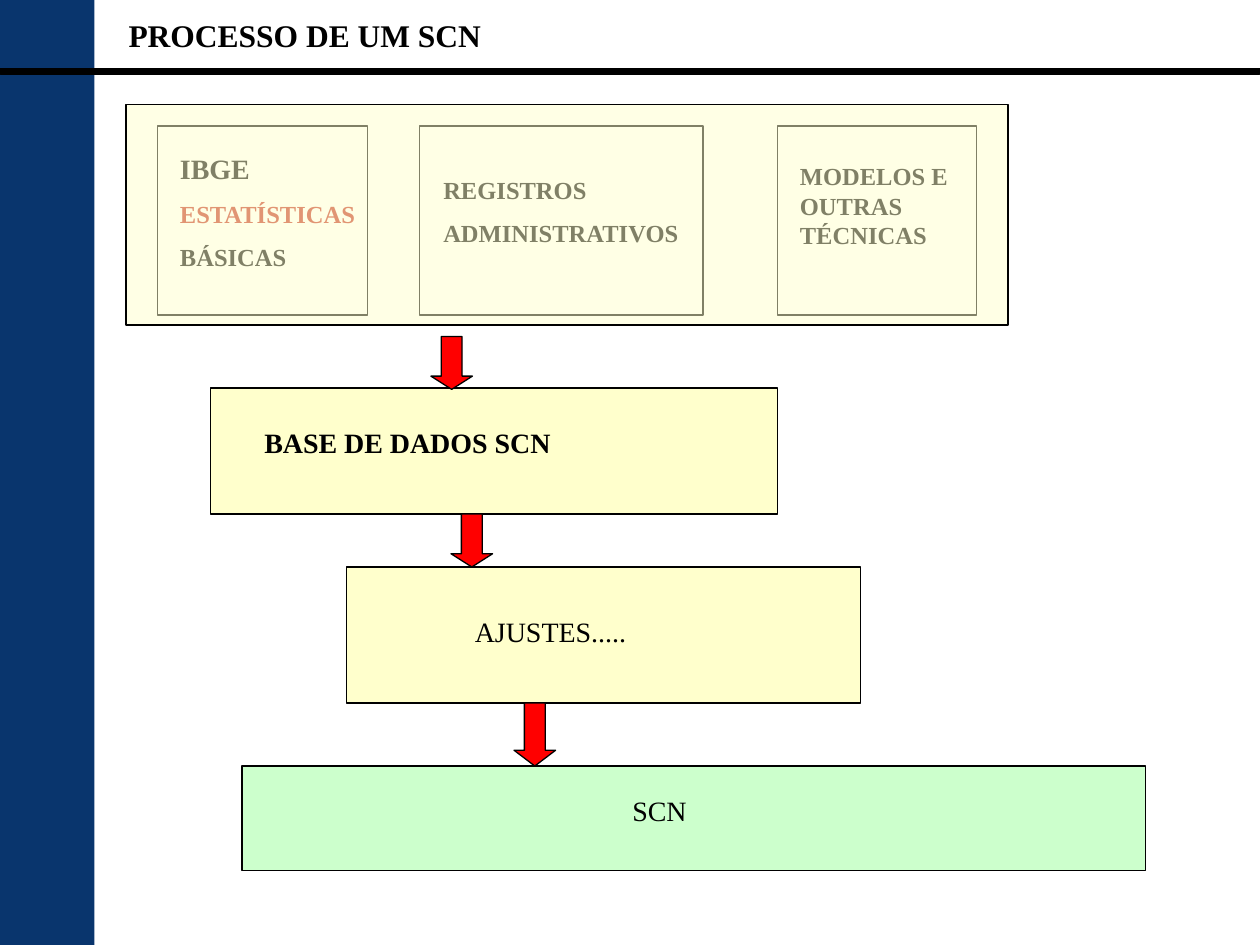
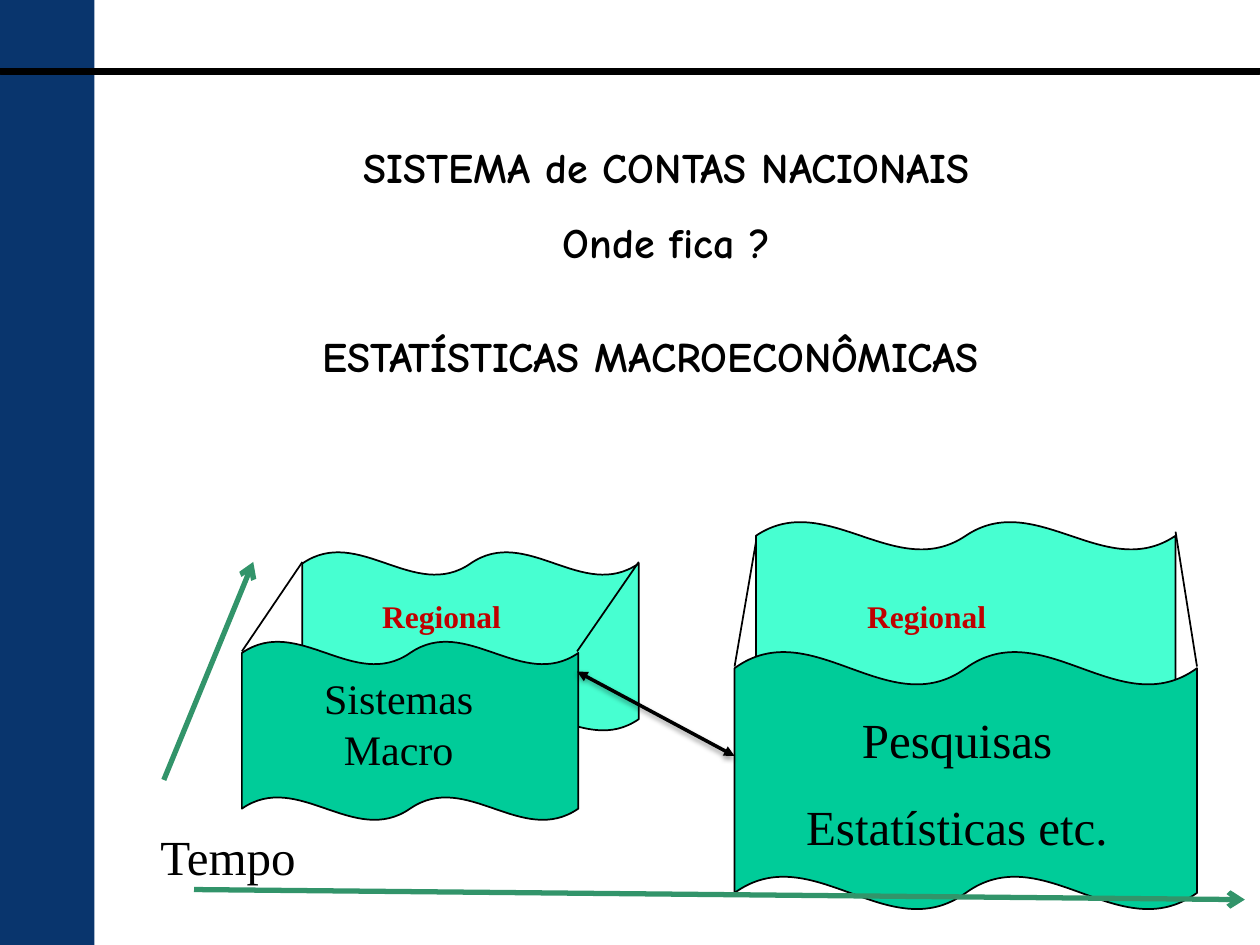
from lxml import etree
from pptx import Presentation
from pptx.dml.color import RGBColor
from pptx.enum.shapes import MSO_CONNECTOR, MSO_SHAPE
from pptx.enum.text import MSO_ANCHOR, MSO_AUTO_SIZE, PP_ALIGN
from pptx.oxml import parse_xml
from pptx.oxml.ns import nsdecls, qn
from pptx.util import Inches, Pt

COLOURS = {
    "black": "000000",
    "navy": "09356D",
    "cream": "FFFFCC",
    "pale green": "CCFFCC",
    "red": "FF0000",
    "brick": "C42B1A",
    "dark red": "C00000",
    "mint": "47FFD1",
    "teal": "00CC99",
    "axis green": "32946A",
}
SERIF, COMIC = "Times New Roman", "Comic Neue"
TITLE_ONLY = 5


def colour(name):
    return RGBColor.from_string(COLOURS[name])


class Deck:
    """Holds the presentation, its shared style and the current slide."""

    def __init__(self):
        self.presentation = Presentation()
        self.presentation.slide_width = Inches(10)
        self.presentation.slide_height = Inches(7.5)
        self.slide = None

    def new_slide(self):
        layout = self.presentation.slide_layouts[TITLE_ONLY]
        self.slide = self.presentation.slides.add_slide(layout)

    def add_master_bands(self):
        """Draw the side and top bands and move them to the slide master."""
        master_tree = self.presentation.slide_master.shapes.element
        side = self.shape(MSO_SHAPE.RECTANGLE, (0, 0, 0.75, 7.5), "navy", 0)
        rule = self.shape(MSO_SHAPE.RECTANGLE, (0, 0.54, 10, 0.05), "black", 0.5)
        for band in (side, rule):
            master_tree.append(band.element)

    def shape(self, kind, box, fill=None, line=0.75, adjustments=(), opacity=None):
        shape = self.slide.shapes.add_shape(kind, *map(Inches, box))
        shape.shadow.inherit = False
        for index, value in enumerate(adjustments):
            shape.adjustments[index] = value
        if fill:
            shape.fill.solid()
            shape.fill.fore_color.rgb = colour(fill)
        else:
            shape.fill.background()
        if line:
            shape.line.color.rgb = colour("black")
            shape.line.width = Pt(line)
        else:
            shape.line.fill.background()
        if opacity:
            fill_colour = shape.element.spPr.find(qn("a:solidFill"))[0]
            etree.SubElement(fill_colour, qn("a:alpha"), val=str(opacity * 1000))
        return shape

    def box(self, box, fill=None, opacity=None):
        self.shape(MSO_SHAPE.RECTANGLE, box, fill, opacity=opacity)

    def down_arrow(self, left, top, height):
        width = 0.33
        self.shape(MSO_SHAPE.DOWN_ARROW, (left, top, width, height), "red",
                   adjustments=(0.5, 0.25 * height / width))

    def wave(self, box, fill):
        self.shape(MSO_SHAPE.DOUBLE_WAVE, box, fill, 1, (0.065, 0))

    def set_lines(self, shape, lines, font, bold, align, anchor):
        """Fill a shape with lines given as (text, size[, colour])."""
        frame = shape.text_frame
        frame.word_wrap = True
        frame.auto_size = MSO_AUTO_SIZE.NONE
        frame.vertical_anchor = anchor
        for index, (text, size, *ink) in enumerate(lines):
            paragraph = frame.add_paragraph() if index else frame.paragraphs[0]
            paragraph.text = text
            paragraph.alignment = align
            paragraph.space_before = Pt(round(0.57 * size) if index else 0)
            paragraph.font.name = font
            paragraph.font.size = Pt(size)
            paragraph.font.bold = bold
            paragraph.font.color.rgb = colour(*ink or ["black"])

    def title(self, box, lines, font=SERIF, align=PP_ALIGN.LEFT, anchor=MSO_ANCHOR.TOP):
        title = self.slide.shapes.title
        title.left, title.top, title.width, title.height = map(Inches, box)
        self.set_lines(title, lines, font, True, align, anchor)

    def text(self, box, lines, font=SERIF, bold=False, align=PP_ALIGN.LEFT,
             anchor=MSO_ANCHOR.TOP):
        text_box = self.slide.shapes.add_textbox(*map(Inches, box))
        self.set_lines(text_box, lines, font, bold, align, anchor)

    def line(self, start, end, ink="black", width=1, head=None, tail=None, shadow=False):
        connector = self.slide.shapes.add_connector(
            MSO_CONNECTOR.STRAIGHT, *map(Inches, start + end))
        connector.line.color.rgb = colour(ink)
        connector.line.width = Pt(width)
        properties = connector.element.spPr
        outline = properties.find(qn("a:ln"))
        for tag, arrow in (("a:headEnd", head), ("a:tailEnd", tail)):
            if arrow:
                etree.SubElement(outline, qn(tag), type=arrow)
        effects = etree.SubElement(properties, qn("a:effectLst"))
        if shadow:
            effects.append(parse_xml(
                f'<a:outerShdw {nsdecls("a")} blurRad="{Pt(3.1)}" dist="{Pt(1.6)}" '
                f'dir="5400000" rotWithShape="0"><a:srgbClr val="{COLOURS["black"]}">'
                '<a:alpha val="38000"/></a:srgbClr></a:outerShdw>'))


def build_process_slide(deck):
    deck.title((0.92, 0.08, 8.33, 0.57), [("PROCESSO DE UM SCN", 18)])

    for left, width in ((1.25, 1.67), (3.33, 2.25), (6.17, 1.58)):
        deck.box((left, 1, width, 1.5))
    sources = [
        ((1.33, 1.15, 1.83, 1.1),
         [("IBGE", 16), ("ESTATÍSTICAS", 14, "brick"), ("BÁSICAS", 14)]),
        ((3.42, 1.34, 2.17, 0.68), [("REGISTROS", 14), ("ADMINISTRATIVOS", 14)]),
        ((6.25, 1.23, 1.42, 0.8), [("MODELOS E OUTRAS TÉCNICAS", 14)]),
    ]
    for box, lines in sources:
        deck.text(box, lines, bold=True)
    deck.box((1, 0.83, 7, 1.75), "cream", opacity=50)

    stages = [
        ((1.67, 3.08, 4.5, 1), "cream", (2, 3.33, 3.67, 0.5), "BASE DE DADOS SCN", True),
        ((2.75, 4.5, 4.08, 1.08), "cream", (3.67, 4.83, 2.08, 0.5), "AJUSTES.....", False),
        ((1.92, 6.08, 7.17, 0.83), "pale green", (4.92, 6.25, 1.17, 0.5), "SCN", False),
    ]
    for box, fill, label_box, label, bold in stages:
        deck.box(box, fill)
        deck.text(label_box, [(label, 16)], bold=bold)
    for left, top, height in ((3.42, 2.67, 0.42), (3.58, 4.08, 0.42), (4.08, 5.58, 0.5)):
        deck.down_arrow(left, top, height)


def build_location_slide(deck):
    centred = {"align": PP_ALIGN.CENTER}
    heading = {"font": COMIC, "anchor": MSO_ANCHOR.MIDDLE, **centred}
    deck.title((0.58, 1.07, 9.42, 1.1),
               [("SISTEMA de CONTAS NACIONAIS", 24), ("Onde fica ?", 24)], **heading)
    deck.text((0.83, 2.57, 8.67, 0.5), [("ESTATÍSTICAS MACROECONÔMICAS", 24)],
              bold=True, **heading)

    deck.wave((6, 4.14, 3.33, 1.73), "mint")
    deck.wave((2.4, 4.38, 2.67, 1.42), "mint")
    deck.wave((1.92, 5.09, 2.67, 1.42), "teal")
    deck.wave((5.83, 5.17, 3.67, 2.05), "teal")
    deck.text((6.17, 5.58, 2.85, 1.28),
              [("Pesquisas", 28), ("Estatísticas etc.", 28)], **centred)
    deck.line((4.58, 5.33), (5.83, 6), width=2, head="triangle", tail="triangle",
              shadow=True)
    deck.text((2.08, 5.29, 2.17, 0.9), [("Sistemas Macro", 24)], **centred)

    block_edges = [
        ((1.92, 5.17), (2.4, 4.46)),
        ((4.58, 5.17), (5.07, 4.46)),
        ((5.83, 5.29), (6, 4.3)),
        ((9.5, 5.29), (9.33, 4.22)),
    ]
    for front, back in block_edges:
        deck.line(front, back)
    for left in (2.72, 6.57):
        deck.text((left, 4.69, 1.57, 0.4), [("Regional", 18, "dark red")],
                  bold=True, **centred)

    deck.text((1.14, 6.51, 1.34, 0.57), [("Tempo", 28)], **centred)
    for start, end in (((1.54, 7.06), (9.88, 7.14)), ((1.3, 6.19), (2.01, 4.46))):
        deck.line(start, end, "axis green", 3, tail="arrow")


def main():
    deck = Deck()
    deck.new_slide()
    deck.add_master_bands()
    build_process_slide(deck)
    deck.new_slide()
    build_location_slide(deck)
    deck.presentation.save("out.pptx")


if __name__ == "__main__":
    main()
